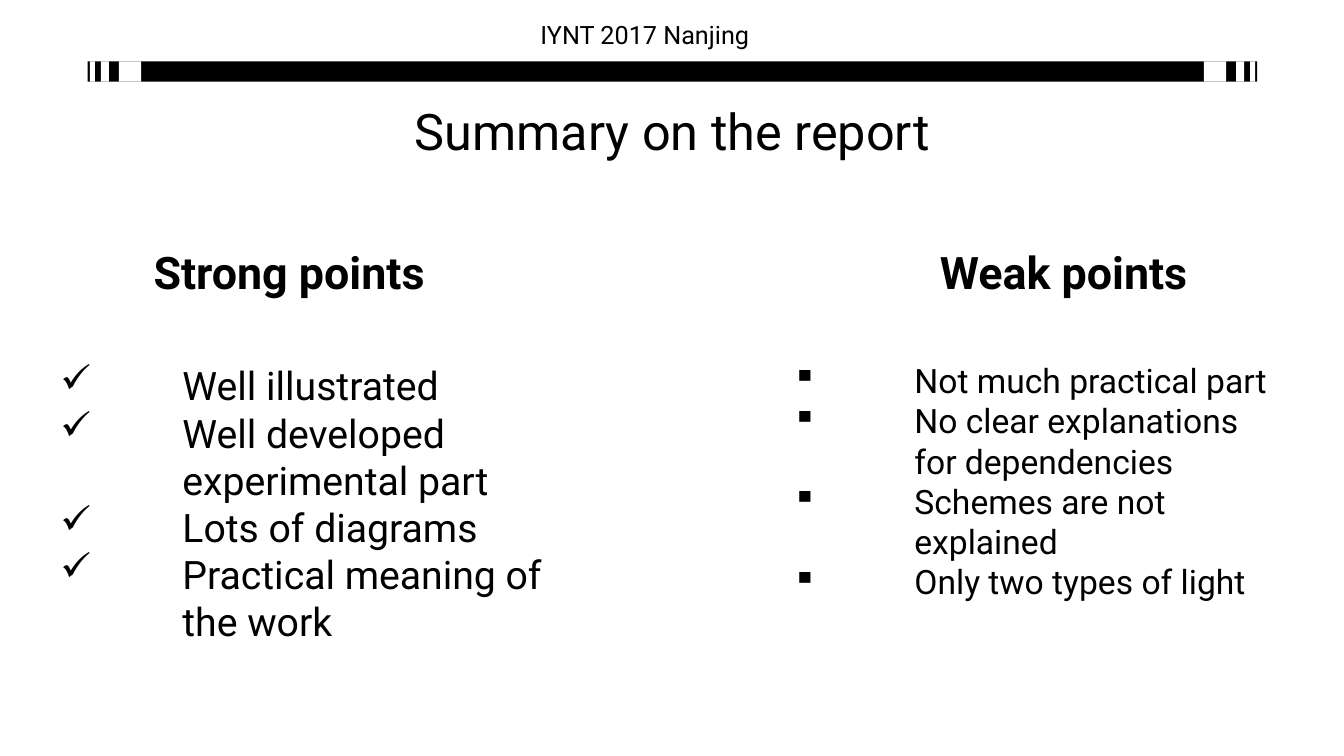
from dataclasses import dataclass
from lxml.etree import SubElement
from pptx import Presentation
from pptx.dml.color import RGBColor as RGB
from pptx.enum.shapes import MSO_SHAPE as Shape
from pptx.enum.text import MSO_ANCHOR as Anchor, MSO_AUTO_SIZE as Fit, PP_ALIGN as Align
from pptx.oxml.ns import qn
from pptx.util import Inches, Pt


@dataclass(frozen=True)
class Theme:
    font: str = "Roboto"
    ink: RGB = RGB(0, 0, 0)
    paper: RGB = RGB(255, 255, 255)
    event: int = 18
    title: int = 36
    head: int = 32
    strong: int = 28
    weak: int = 24


class Page:
    def __init__(self, deck, theme):
        self.theme = theme
        self.slide = deck.slides.add_slide(deck.slide_layouts[6])
        fill = self.slide.background.fill
        fill.solid()
        fill.fore_color.rgb = theme.paper

    def block(self, box, color):
        shape = self.slide.shapes.add_shape(Shape.RECTANGLE, *map(Inches, box))
        shape.shadow.inherit = False
        shape.fill.solid()
        shape.fill.fore_color.rgb = color
        shape.line.fill.background()

    def text(self, box, text, size, bold=False, wrap=False, grow=True, align=Align.CENTER):
        frame = self.slide.shapes.add_textbox(*map(Inches, box)).text_frame
        frame.margin_left = frame.margin_right = Inches(0.05)
        frame.margin_top = frame.margin_bottom = Inches(0.05)
        frame.word_wrap = wrap
        frame.auto_size = Fit.SHAPE_TO_FIT_TEXT if grow else Fit.NONE
        frame.text = text
        for para in frame.paragraphs:
            para.alignment = align
            for run in para.runs:
                font = run.font
                font.name, font.size, font.bold = self.theme.font, Pt(size), bold
                font.color.rgb = self.theme.ink
        return frame

    def title(self, box, text):
        frame = self.text(box, text, self.theme.title, wrap=True, grow=False)
        frame.vertical_anchor = Anchor.MIDDLE
        frame.paragraphs[0].line_spacing = 0.9

    def points(self, box, items, size, mark):
        frame = self.text(box, "\n".join(items), size, wrap=True, align=Align.LEFT)
        indent = Inches(1.21)
        for para in frame.paragraphs:
            props = para._p.get_or_add_pPr()
            props.set("marL", str(indent))
            props.set("indent", str(-indent))
            SubElement(props, qn("a:buChar")).set("char", mark)


def main():
    deck = Presentation()
    deck.slide_width, deck.slide_height = Inches(13.33), Inches(7.5)
    theme = Theme()
    page = Page(deck, theme)

    # Header bar with stripes mirrored at both ends
    left, top, width, height = 0.87, 0.61, 11.6, 0.2
    page.block((left, top, width, height), theme.ink)
    for x, wide in ((0.89, 0.05), (1, 0.08), (1.18, 0.22)):
        for side in (x, 2 * left + width - x - wide):
            page.block((side, top, wide, height), theme.paper)

    # Event name and title
    page.text((5.31, 0.14, 2.22, 0.41), "IYNT 2017 Nanjing", theme.event, align=Align.LEFT)
    page.title((0.92, 0.83, 11.5, 1.01), "Summary on the report")

    # Strong points
    page.text((1.37, 2.38, 3, 0.63), "Strong points", theme.head, bold=True)
    strong = ("Well illustrated", "Well developed experimental part",
              "Lots of diagrams", "Practical meaning of the work")
    page.points((0.55, 3.54, 5.17, 4.34), strong, theme.strong, "✓")

    # Weak points
    page.text((9.19, 2.38, 2.72, 0.63), "Weak points", theme.head, bold=True)
    weak = ("Not much practical part", "No clear explanations for dependencies",
            "Schemes are not explained", "Only two types of light")
    page.points((7.81, 3.52, 4.92, 2.52), weak, theme.weak, "▪")

    deck.save("out.pptx")


if __name__ == "__main__":
    main()
